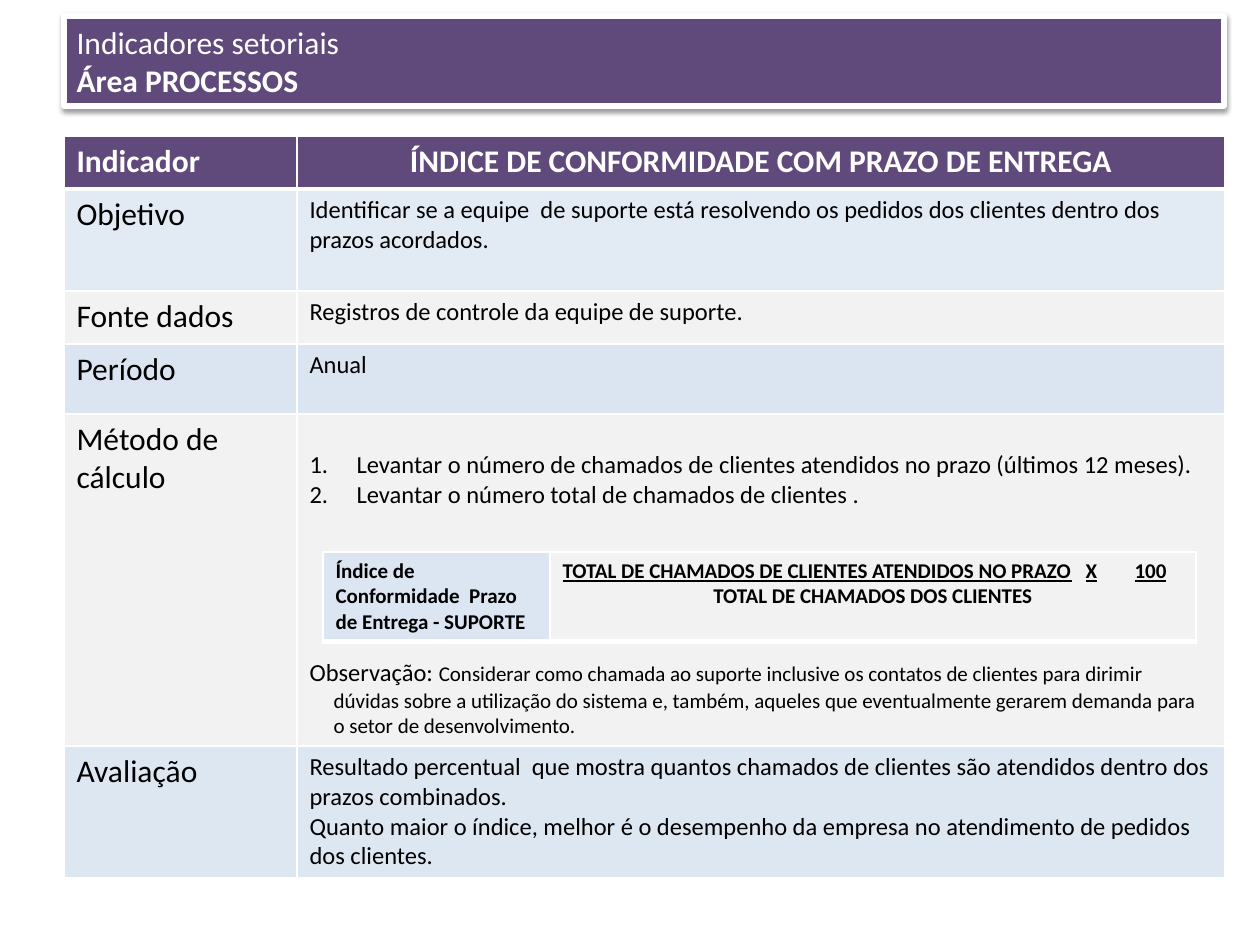
from dataclasses import dataclass

from lxml import etree
from pptx import Presentation, util as u
from pptx.dml.color import RGBColor
from pptx.enum import text
from pptx.oxml import ns

EMU_PER_PX = 914400 / 126


@dataclass(frozen=True)
class Theme:
    font: str = "Calibri"
    purple: str = "604A7B"
    blue: str = "B9CDE5"
    pale_blue: str = "DCE6F2"
    grey: str = "F2F2F2"
    white: str = "FFFFFF"
    black: str = "000000"
    heading: int = 18
    body: int = 14
    small: int = 12
    thin: int = 1
    thick: int = 3


THEME = Theme()


def px(length):
    return u.Emu(round(length * EMU_PER_PX))


def add_xml(parent, tag, **attributes):
    values = {name: str(value) for name, value in attributes.items()}
    return etree.SubElement(parent, ns.qn(tag), values)


def add_run(paragraph, words, size, color=THEME.black, bold=False, underline=False):
    run = paragraph.add_run()
    run.text = words
    font = run.font
    font.name, font.size = THEME.font, u.Pt(size)
    font.bold, font.underline = bold, underline
    font.color.rgb = RGBColor.from_string(color)


def set_indent(paragraph, indent):
    properties = paragraph._p.get_or_add_pPr()
    properties.set("marL", str(px(indent)))
    properties.set("indent", str(-px(indent)))
    return properties


def add_numbering(paragraph, indent):
    properties = set_indent(paragraph, indent)
    add_xml(properties, "a:buFont", typeface="+mj-lt")
    add_xml(properties, "a:buAutoNum", type="arabicPeriod")


def add_tab_stops(paragraph, positions):
    stops = add_xml(paragraph._p.get_or_add_pPr(), "a:tabLst")
    for position in positions:
        add_xml(stops, "a:tab", pos=px(position), algn="l")


def add_shadow(shape):
    effects = add_xml(shape._element.spPr, "a:effectLst")
    shadow = add_xml(effects, "a:outerShdw", blurRad=u.Pt(3.1), dist=u.Pt(1.6),
                     dir=5400000, rotWithShape=0)
    color = add_xml(shadow, "a:srgbClr", val=THEME.black)
    add_xml(color, "a:alpha", val=38000)


def add_borders(cell, top, bottom):
    properties = cell._tc.get_or_add_tcPr()
    widths = {"L": THEME.thin, "R": THEME.thin, "T": top, "B": bottom}
    for side, width in widths.items():
        line = add_xml(properties, f"a:ln{side}", w=u.Pt(width))
        add_xml(add_xml(line, "a:solidFill"), "a:srgbClr", val=THEME.white)


def fill_cell(cell, color, opacity=100):
    cell.fill.solid()
    cell.fill.fore_color.rgb = RGBColor.from_string(color)
    if opacity < 100:
        color_element = cell._tc.tcPr.find(".//" + ns.qn("a:solidFill") + "[last()]")
        color_element = cell._tc.tcPr.findall(ns.qn("a:solidFill"))[-1][0]
        add_xml(color_element, "a:alpha", val=opacity * 1000)


def add_table(slide, left, top, columns, rows):
    frame = slide.shapes.add_table(len(rows), len(columns), px(left), px(top),
                                   px(sum(columns)), px(sum(rows)))
    table = frame.table
    table.first_row = table.horz_banding = False
    for column, width in zip(table.columns, columns):
        column.width = px(width)
    for row, height in zip(table.rows, rows):
        row.height = px(height)
    return table


def add_title(slide):
    title = slide.shapes.title
    title.left, title.top, title.width, title.height = map(px, (64, 16, 1160, 90))
    title.fill.solid()
    title.fill.fore_color.rgb = RGBColor.from_string(THEME.purple)
    title.line.color.rgb = RGBColor.from_string(THEME.white)
    title.line.width = u.Pt(THEME.thick)
    add_shadow(title)
    frame = title.text_frame
    frame.word_wrap = True
    frame.auto_size = text.MSO_AUTO_SIZE.NONE
    frame.vertical_anchor = text.MSO_ANCHOR.MIDDLE
    lines = (frame.paragraphs[0], frame.add_paragraph())
    for paragraph, words, bold in zip(
            lines, ("Indicadores setoriais", "Área PROCESSOS"), (False, True)):
        paragraph.alignment = text.PP_ALIGN.LEFT
        add_run(paragraph, words, THEME.heading, THEME.white, bold)


def write_method(cell):
    cell.margin_top = px(36)
    frame = cell.text_frame
    steps = ("Levantar o número de chamados de clientes atendidos no prazo (últimos 12 meses).",
             "Levantar o número total de chamados de clientes .")
    for paragraph, step in zip((frame.paragraphs[0], frame.add_paragraph()), steps):
        add_numbering(paragraph, 47)
        add_run(paragraph, step, THEME.body)
    note = frame.add_paragraph()
    note.space_before = u.Pt(85)
    set_indent(note, 24)
    add_run(note, "Observação: ", THEME.body)
    add_run(note, "Considerar como chamada ao suporte inclusive os contatos de clientes "
            "para dirimir dúvidas sobre a utilização do sistema e, também, aqueles que "
            "eventualmente gerarem demanda para o setor de desenvolvimento.", THEME.small)


def write_lines(cell, lines):
    frame = cell.text_frame
    for index, words in enumerate(lines):
        paragraph = frame.add_paragraph() if index else frame.paragraphs[0]
        add_run(paragraph, words, THEME.body)


def add_indicator_table(slide):
    rows = (
        ("Objetivo", 102, THEME.blue, 41,
         ("Identificar se a equipe  de suporte está resolvendo os pedidos dos clientes "
          "dentro dos prazos acordados.",)),
        ("Fonte dados", 53, THEME.grey, 100,
         ("Registros de controle da equipe de suporte.",)),
        ("Período", 70, THEME.blue, 51, ("Anual",)),
        ("Método de cálculo", 332, THEME.grey, 100, None),
        ("Avaliação", 132, THEME.blue, 48,
         ("Resultado percentual  que mostra quantos chamados de clientes são atendidos "
          "dentro dos prazos combinados.",
          "Quanto maior o índice, melhor é o desempenho da empresa no atendimento de "
          "pedidos dos clientes.")),
    )
    table = add_table(slide, 64, 136, (233, 928), (53, *(row[1] for row in rows)))
    headings = ("Indicador", "ÍNDICE DE CONFORMIDADE COM PRAZO DE ENTREGA")
    alignments = (text.PP_ALIGN.LEFT, text.PP_ALIGN.CENTER)
    for column, (heading, alignment) in enumerate(zip(headings, alignments)):
        cell = table.cell(0, column)
        add_borders(cell, THEME.thin, THEME.thick)
        fill_cell(cell, THEME.purple)
        paragraph = cell.text_frame.paragraphs[0]
        paragraph.alignment = alignment
        add_run(paragraph, heading, THEME.heading, THEME.white, True)
    for index, (label, _, color, opacity, lines) in enumerate(rows, 1):
        label_cell, content_cell = table.cell(index, 0), table.cell(index, 1)
        for cell in (label_cell, content_cell):
            add_borders(cell, THEME.thick if index == 1 else THEME.thin, THEME.thin)
            fill_cell(cell, color, opacity)
        add_run(label_cell.text_frame.paragraphs[0], label, THEME.heading)
        if lines:
            write_lines(content_cell, lines)
        else:
            write_method(content_cell)


def add_formula_table(slide):
    table = add_table(slide, 323, 552, (227, 646), (87,))
    name_cell, ratio_cell = table.cell(0, 0), table.cell(0, 1)
    for cell in (name_cell, ratio_cell):
        add_borders(cell, THEME.thin, THEME.thick)
    fill_cell(name_cell, THEME.pale_blue)
    ratio_cell.fill.background()
    add_run(name_cell.text_frame.paragraphs[0],
            "Índice de  Conformidade  Prazo de Entrega - SUPORTE", THEME.small, bold=True)
    numerator = ratio_cell.text_frame.paragraphs[0]
    add_tab_stops(numerator, (523, 572))
    add_run(numerator, "TOTAL DE CHAMADOS DE CLIENTES ATENDIDOS NO PRAZO\tX\t100",
            THEME.small, bold=True, underline=True)
    denominator = ratio_cell.text_frame.add_paragraph()
    denominator.alignment = text.PP_ALIGN.CENTER
    add_run(denominator, "TOTAL DE CHAMADOS DOS CLIENTES", THEME.small, bold=True)


def main():
    presentation = Presentation()
    presentation.slide_width, presentation.slide_height = px(1260), px(945)
    slide = presentation.slides.add_slide(presentation.slide_layouts[5])
    add_title(slide)
    add_indicator_table(slide)
    add_formula_table(slide)
    presentation.save("out.pptx")


if __name__ == "__main__":
    main()
